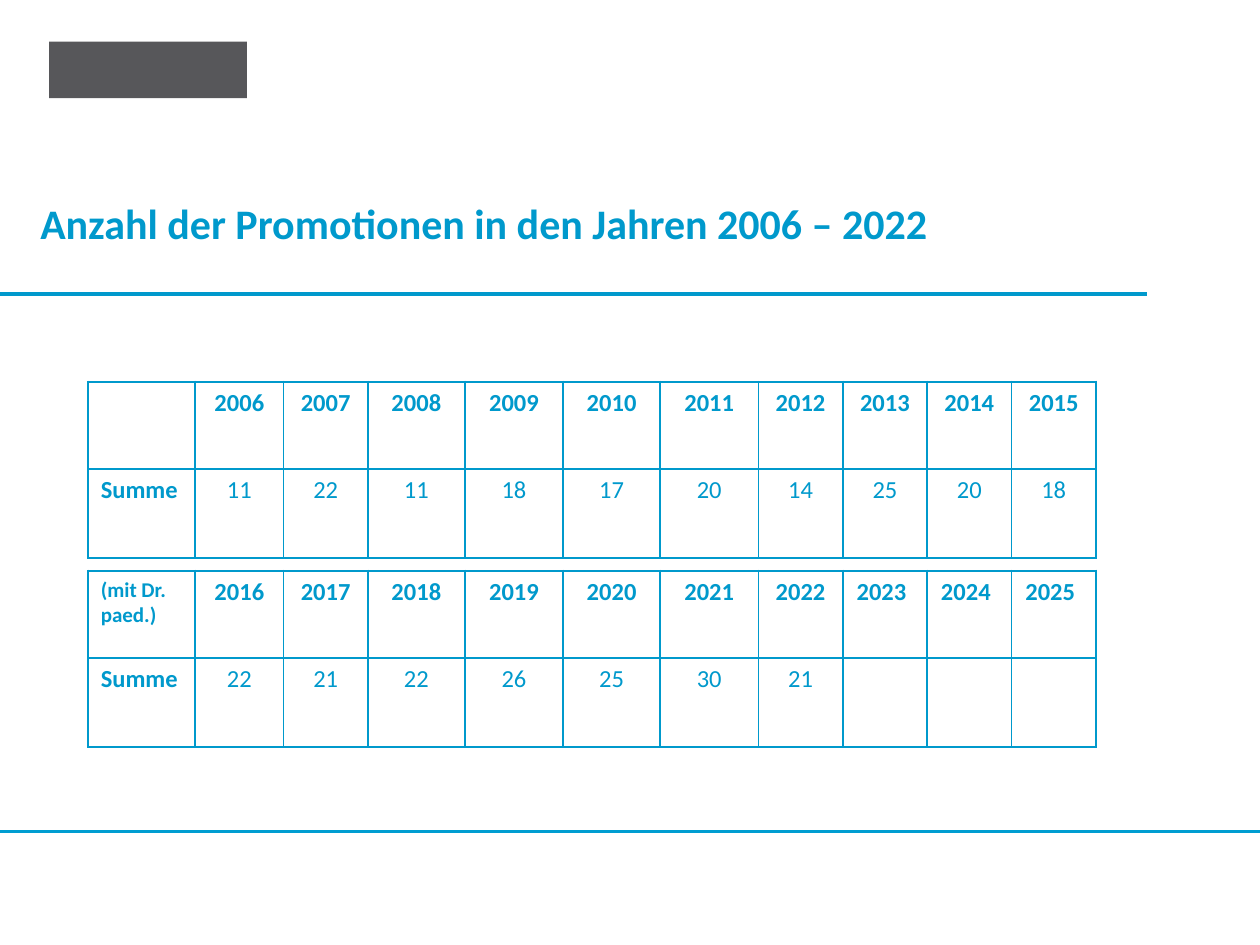
from lxml.etree import SubElement
from pptx import Presentation
from pptx.dml.color import RGBColor
from pptx.enum.shapes import MSO_CONNECTOR, MSO_SHAPE
from pptx.enum.text import MSO_ANCHOR, MSO_AUTO_SIZE, PP_ALIGN
from pptx.oxml.ns import qn
from pptx.util import Inches, Pt

BLUE = "0099CC"
FONT = "Calibri"
COLUMN_WIDTHS = [0.85, 0.7, 0.67, 0.77, 0.78, 0.77, 0.78, 0.67, 0.67, 0.67, 0.67]
ROW_HEIGHTS = [0.69, 0.71]
LABEL_INDENT = 0.1
PENDING_INDENT = 0.11


def color(value):
    return RGBColor.from_string(value)


def write(paragraph, text, size, bold, alignment=PP_ALIGN.LEFT):
    paragraph.alignment = alignment
    span = paragraph.add_run()
    span.text = text
    for name, value in {"name": FONT, "size": Pt(size), "bold": bold}.items():
        setattr(span.font, name, value)
    span.font.color.rgb = color(BLUE)


def set_title(page, text):
    title = page.shapes.title
    place = {"left": 0.31, "top": 1.56, "width": 7.45, "height": 0.43}
    for name, value in place.items():
        setattr(title, name, Inches(value))
    frame = title.text_frame
    settings = {
        "margin_left": Inches(0.01), "margin_top": Inches(0.01),
        "margin_right": 0, "margin_bottom": 0, "word_wrap": True,
        "auto_size": MSO_AUTO_SIZE.NONE, "vertical_anchor": MSO_ANCHOR.TOP,
    }
    for name, value in settings.items():
        setattr(frame, name, value)
    write(frame.paragraphs[0], text, 24, True)


def add_rule(page, top, width, weight, line_color):
    rule = page.shapes.add_connector(
        MSO_CONNECTOR.STRAIGHT, 0, Inches(top), Inches(width), Inches(top))
    rule.line.width = Pt(weight)
    rule.line.color.rgb = color(line_color)
    SubElement(rule._element.spPr, qn("a:effectLst"))


def add_logo_block(page):
    block = page.shapes.add_shape(
        MSO_SHAPE.RECTANGLE, Inches(0.39), Inches(0.33), Inches(1.57), Inches(0.45))
    block.shadow.inherit = False
    block.fill.solid()
    block.fill.fore_color.rgb = color("57575A")
    block.line.fill.background()


def set_borders(cell, side_weight):
    """Draw 1.5 pt lines above and below, and side_weight lines left and right."""
    weights = {"lnL": side_weight, "lnR": side_weight, "lnT": 1.5, "lnB": 1.5}
    properties = cell._tc.get_or_add_tcPr()
    for side, weight in weights.items():
        line = SubElement(properties, qn(f"a:{side}"), w=str(Pt(weight)))
        fill = SubElement(line, qn("a:solidFill"))
        SubElement(fill, qn("a:srgbClr"), val=BLUE)


def format_cell(cell, indent, side_weight):
    margins = {"margin_left": indent, "margin_right": 0,
               "margin_top": 0.05, "margin_bottom": 0}
    for name, value in margins.items():
        setattr(cell, name, Inches(value))
    set_borders(cell, side_weight)
    cell.fill.background()


def add_count_table(page, top, corner, first_year, counts):
    """Add ten years with their counts; years without a count are left aligned."""
    table = page.shapes.add_table(
        len(ROW_HEIGHTS), len(COLUMN_WIDTHS), Inches(0.7), Inches(top),
        Inches(sum(COLUMN_WIDTHS)), Inches(sum(ROW_HEIGHTS))).table
    table.first_row = table.horz_banding = False
    for column, width in zip(table.columns, COLUMN_WIDTHS):
        column.width = Inches(width)
    for row, height in zip(table.rows, ROW_HEIGHTS):
        row.height = Inches(height)

    for row, (label, size) in enumerate([(corner, 12), ("Summe", 14)]):
        cell = table.cell(row, 0)
        format_cell(cell, LABEL_INDENT, 1.5)
        if label:
            write(cell.text_frame.paragraphs[0], label, size, True)

    for index in range(len(COLUMN_WIDTHS) - 1):
        counted = index < len(counts)
        year_cell, count_cell = (table.cell(row, index + 1) for row in range(2))
        format_cell(year_cell, 0 if counted else PENDING_INDENT, 1)
        format_cell(count_cell, 0, 1)
        write(year_cell.text_frame.paragraphs[0], str(first_year + index), 14, True,
              PP_ALIGN.CENTER if counted else PP_ALIGN.LEFT)
        if counted:
            write(count_cell.text_frame.paragraphs[0], str(counts[index]), 14, False,
                  PP_ALIGN.CENTER)


def main():
    deck = Presentation()
    deck.slide_width, deck.slide_height = Inches(10), Inches(7.5)
    page = deck.slides.add_slide(deck.slide_layouts[5])
    add_logo_block(page)
    add_rule(page, 6.6, 10, 1.32, "009DD1")
    set_title(page, "Anzahl der Promotionen in den Jahren 2006 – 2022")
    add_count_table(page, 3.03, "", 2006, [11, 22, 11, 18, 17, 20, 14, 25, 20, 18])
    add_rule(page, 2.33, 9.1, 2.28, BLUE)
    add_count_table(page, 4.53, "(mit Dr. paed.)", 2016, [22, 21, 22, 26, 25, 30, 21])
    deck.save("out.pptx")


if __name__ == "__main__":
    main()
